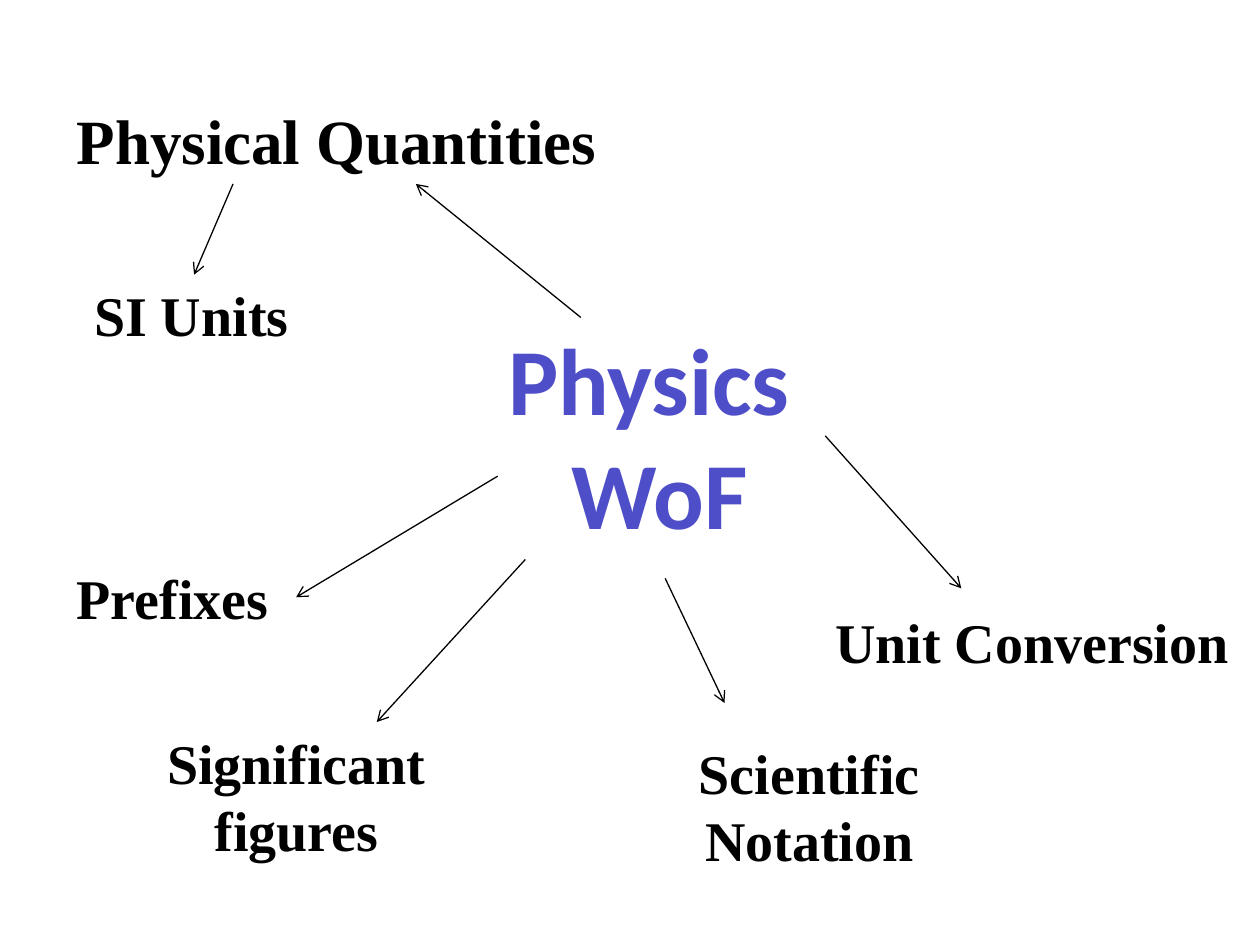
from pptx import Presentation
from pptx.dml.color import RGBColor
from pptx.enum import shapes, text
from pptx.oxml import parse_xml
from pptx.oxml.ns import nsdecls
from pptx.util import Pt

SERIF = "Times New Roman"
LEFT, MID = text.PP_ALIGN.LEFT, text.PP_ALIGN.CENTER


def color(code):
    return RGBColor.from_string(code)


def write(shape, lines, face, size, code, align, wrap=False):
    """Fill a shape with one bold paragraph per line."""
    frame = shape.text_frame
    frame.text = "\n".join(lines)
    frame.word_wrap = wrap
    frame.auto_size = text.MSO_AUTO_SIZE.SHAPE_TO_FIT_TEXT
    frame.vertical_anchor = text.MSO_ANCHOR.TOP
    for para in frame.paragraphs:
        para.alignment = align
        para.font.name = face
        para.font.size = Pt(size)
        para.font.bold = True
        para.font.color.rgb = color(code)


def hub(slide, box, lines):
    """Central topic, held by the title placeholder."""
    title = slide.shapes.title
    title.left, title.top, title.width, title.height = map(Pt, box)
    write(title, lines, "Calibri", 54, "4E4EC9", MID)


def topic(slide, box, lines, size=32, align=LEFT, wrap=False):
    label = slide.shapes.add_textbox(*map(Pt, box))
    write(label, lines, SERIF, size, "000000", align, wrap)


def arrow(slide, start, end):
    line = slide.shapes.add_connector(
        shapes.MSO_CONNECTOR.STRAIGHT, *map(Pt, start + end))
    line.line.color.rgb = color("000000")
    line.line.width = Pt(0.75)
    # Open arrowhead at the end, no shadow
    line.line._get_or_add_ln().append(
        parse_xml(f'<a:tailEnd {nsdecls("a")} type="arrow"/>'))
    line._element.spPr.append(parse_xml(f'<a:effectLst {nsdecls("a")}/>'))


def mind_map(slide, box):
    """Hub, topics and arrows, all placed from the corner of the box."""
    x, y = box[:2]

    def move(left, top, *size):
        return (x + left, y + top, *size)

    # Hub
    hub(slide, move(245.5, 125.3, 189.4, 138.2), ["Physics ", "WoF"])

    # Topics
    topic(slide, move(0, 0, 314.6, 51), ["Physical Quantities"], size=36)
    topic(slide, move(10, 102.3, 126.7, 46), ["SI Units"])
    topic(slide, move(0, 263.5, 125.3, 46), ["Prefixes"])
    topic(slide, move(51, 357.9, 171.4, 85), ["Significant ", "figures "],
          align=MID)
    topic(slide, move(321.8, 363.6, 208, 85), ["Scientific", "Notation"],
          align=MID, wrap=True)
    topic(slide, move(433.4, 288.7, 242, 46), ["Unit Conversion"])

    # Arrows
    for start, end in [
        ((295.2, 126.7), (200.9, 50.4)),   # hub to quantities
        ((96.5, 50.4), (74.2, 102.3)),     # quantities to units
        ((247.7, 217.4), (132.5, 286.6)),  # hub to prefixes
        ((263.5, 265), (178.6, 357.9)),    # hub to figures
        ((343.4, 275.8), (377.3, 347)),    # hub to notation
        ((434.9, 194.4), (512.6, 281.5)),  # hub to conversion
    ]:
        arrow(slide, move(*start), move(*end))


def main():
    deck = Presentation()
    deck.slide_width, deck.slide_height = Pt(720), Pt(540)
    slide = deck.slides.add_slide(deck.slide_layouts[5])
    mind_map(slide, (36.7, 54.7, 675.4, 449))
    deck.save("out.pptx")


if __name__ == "__main__":
    main()
